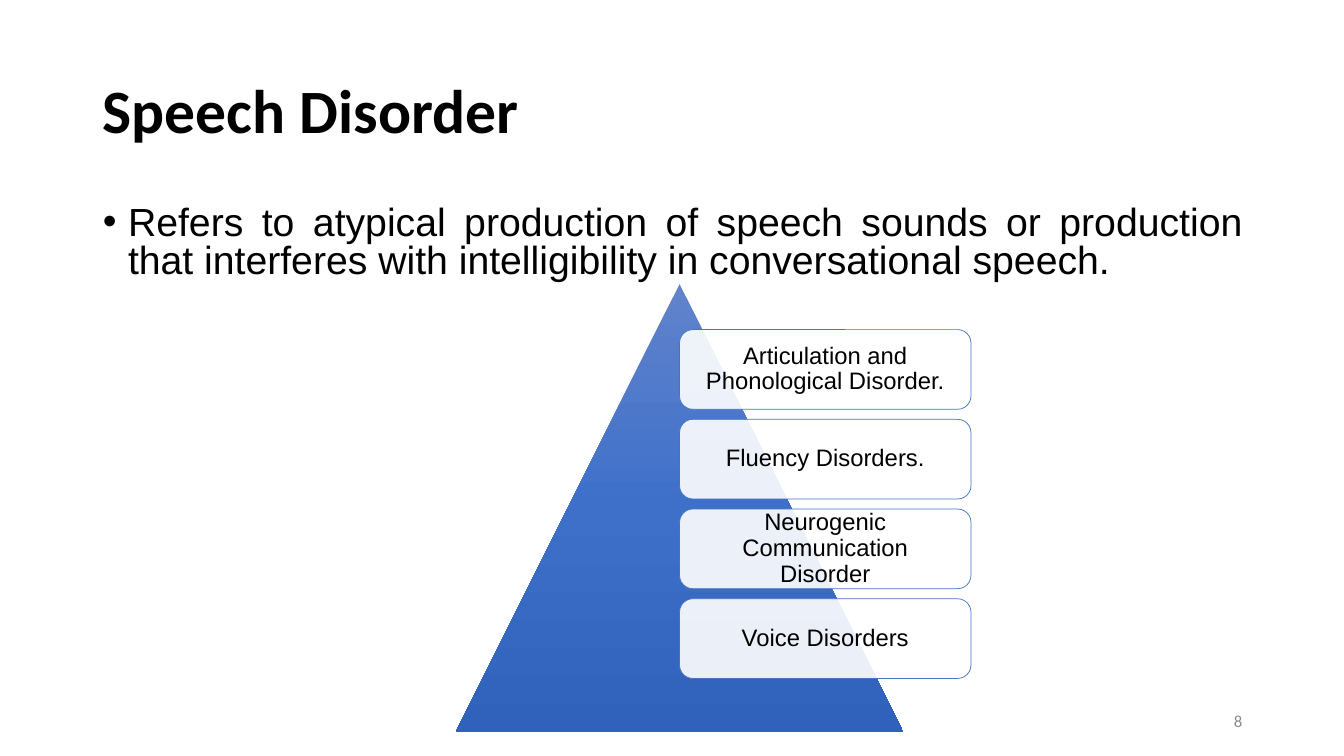
from copy import deepcopy

from lxml import etree
from pptx import Presentation
from pptx import util as u
from pptx.dml.color import RGBColor
from pptx.enum import shapes, text
from pptx.oxml import ns

PX = u.Inches(1) // 100
BLACK = RGBColor(0x00, 0x00, 0x00)
WHITE = RGBColor(0xFF, 0xFF, 0xFF)
GREY = RGBColor(0x8C, 0x8C, 0x8C)
BLUE = RGBColor(0x44, 0x72, 0xC4)
PYRAMID_STOPS = [
    (0, RGBColor(0x61, 0x83, 0xCB)),
    (0.5, RGBColor(0x3E, 0x70, 0xCA)),
    (1, RGBColor(0x30, 0x62, 0xBB)),
]

DISORDERS = [
    "Articulation and Phonological Disorder.",
    "Fluency Disorders.",
    "Neurogenic Communication Disorder",
    "Voice Disorders",
]


class SlideBuilder:
    heading_font = "Calibri"
    body_font = "Arial"

    def __init__(self, deck):
        self.slide = deck.slides.add_slide(deck.slide_layouts[1])

    def place(self, shape, box):
        shape.left, shape.top, shape.width, shape.height = (n * PX for n in box)

    def set_text(self, shape, words, font, size, align, color=BLACK, bold=False,
                 spacing=1.0, anchor=text.MSO_ANCHOR.MIDDLE):
        frame = shape.text_frame
        frame.word_wrap = True
        frame.auto_size = text.MSO_AUTO_SIZE.NONE
        frame.vertical_anchor = anchor
        frame.text = words
        line = frame.paragraphs[0]
        line.alignment = align
        line.line_spacing = spacing
        line.space_before = u.Pt(0)
        line.font.name = font
        line.font.size = u.Pt(size)
        line.font.bold = bold
        line.font.color.rgb = color
        return line

    def title(self, words, box):
        heading = self.slide.shapes.title
        self.place(heading, box)
        self.set_text(heading, words, self.heading_font, 44, text.PP_ALIGN.LEFT,
                      bold=True, spacing=0.9)

    def definition(self, words, box):
        """Fill the body placeholder with one justified bullet."""
        body = self.slide.placeholders[1]
        self.place(body, box)
        bullet = self.set_text(body, words, self.body_font, 28, text.PP_ALIGN.JUSTIFY,
                               spacing=0.8, anchor=text.MSO_ANCHOR.TOP)
        indent = 25 * PX
        properties = bullet._p.get_or_add_pPr()
        properties.set("marL", str(indent))
        properties.set("indent", str(-indent))

    def page_number(self, words, box):
        number = self.slide.shapes.add_textbox(*(n * PX for n in box))
        self.set_text(number, words, self.heading_font, 12, text.PP_ALIGN.RIGHT, GREY)

    def shape(self, kind, box):
        shape = self.slide.shapes.add_shape(kind, *(n * PX for n in box))
        shape.shadow.inherit = False
        return shape

    def pyramid(self, box):
        triangle = self.shape(shapes.MSO_SHAPE.ISOSCELES_TRIANGLE, box)
        triangle.line.fill.background()
        triangle.fill.gradient()
        triangle.fill.gradient_angle = 270
        stop_list = triangle._element.spPr.find(".//" + ns.qn("a:gsLst"))
        stop_list.append(deepcopy(stop_list[0]))
        for stop, (position, color) in zip(triangle.fill.gradient_stops, PYRAMID_STOPS):
            stop.position = position
            stop.color.rgb = color

    def card(self, words, box):
        """Draw a rounded label that lets the pyramid show through slightly."""
        card = self.shape(shapes.MSO_SHAPE.ROUNDED_RECTANGLE, box)
        card.fill.solid()
        card.fill.fore_color.rgb = WHITE
        white = card._element.spPr.find(ns.qn("a:solidFill"))[0]
        etree.SubElement(white, ns.qn("a:alpha"), val="90000")
        card.line.color.rgb = BLUE
        card.line.width = u.Pt(0.5)
        frame = card.text_frame
        frame.margin_left = frame.margin_right = 11 * PX
        frame.margin_top = frame.margin_bottom = 11 * PX
        self.set_text(card, words, self.body_font, 17, text.PP_ALIGN.CENTER, spacing=0.9)


def main():
    deck = Presentation()
    deck.slide_width, deck.slide_height = 1333 * PX, 750 * PX
    page = SlideBuilder(deck)
    page.title("Speech Disorder", (92, 40, 1150, 145))
    page.definition(
        "Refers to atypical production of speech sounds or production that "
        "interferes with intelligibility in conversational speech.",
        (92, 200, 1150, 93),
    )
    page.page_number("8", (942, 695, 300, 40))
    page.pyramid((452, 282, 444, 444))
    card_height, gap = 79, 10
    for row, disorder in enumerate(DISORDERS):
        top = 327 + row * (card_height + gap)
        page.card(disorder, (674, top, 289, card_height))
    deck.save("out.pptx")


if __name__ == "__main__":
    main()
